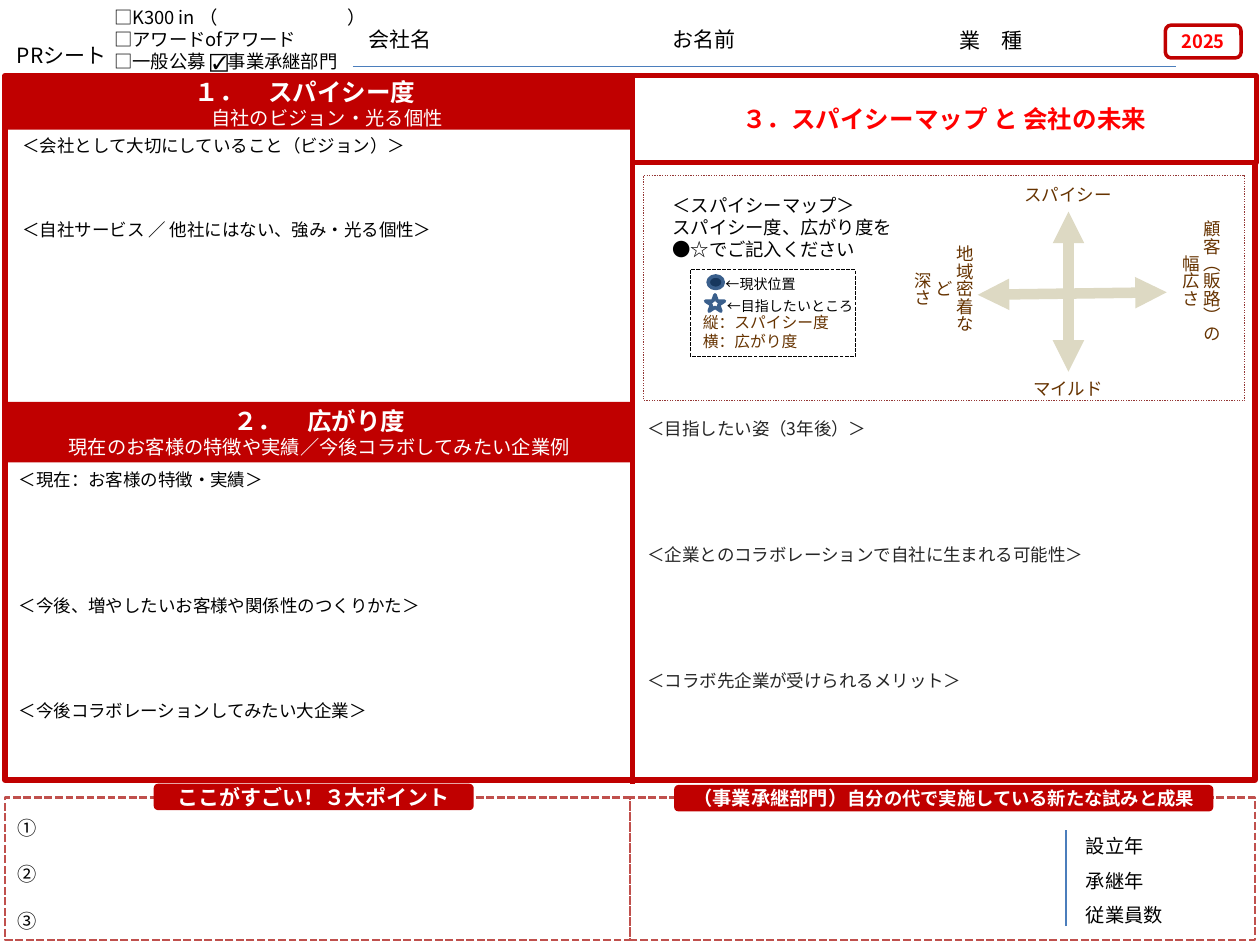
from dataclasses import dataclass

from lxml import etree
from pptx import Presentation
from pptx import util as u
from pptx.dml.color import RGBColor
from pptx.enum import dml, shapes, text
from pptx.oxml.ns import qn

KINDS = shapes.MSO_SHAPE
DASHED = dml.MSO_LINE.SQUARE_DOT
DOTTED = dml.MSO_LINE.ROUND_DOT
MIDDLE = text.MSO_ANCHOR.MIDDLE


@dataclass(frozen=True)
class Theme:
    font: str = "Noto Sans CJK JP"
    ink: str = "000000"
    soft_ink: str = "262626"
    white: str = "FFFFFF"
    red: str = "C00000"
    bright_red: str = "FF0000"
    dash_red: str = "C0504D"
    dot_red: str = "953735"
    brown: str = "663300"
    beige: str = "DDD9C3"
    rule_blue: str = "4B7EBC"
    mark_blue: str = "3A5F8C"
    navy: str = "17375E"
    heading: float = 14
    field: float = 12
    sub: float = 11
    note: float = 10.5
    body: float = 10
    legend: float = 9
    key: float = 8
    leading: float = 1.2


@dataclass
class Line:
    """One paragraph; gap counts the empty lines above it, tail is a second span."""
    words: str
    size: float
    bold: bool = False
    gap: float = 0
    tail: "Line | None" = None


class Sheet:
    def __init__(self, page, theme):
        self.page = page
        self.theme = theme

    def shape(self, kind, at, fill=None, line=None, width=1, dash=None):
        box = self.page.shapes.add_shape(kind, *map(u.Inches, at))
        box.shadow.inherit = False
        if fill:
            box.fill.solid()
            box.fill.fore_color.rgb = RGBColor.from_string(fill)
        else:
            box.fill.background()
        if line:
            box.line.color.rgb = RGBColor.from_string(line)
            box.line.width = u.Pt(width)
            if dash:
                box.line.dash_style = dash
        else:
            box.line.fill.background()
        return box

    def text(self, at, lines, color=None, center=False, anchor=text.MSO_ANCHOR.TOP,
             spacing=1, wrap=True):
        box = self.page.shapes.add_textbox(*map(u.Inches, at))
        self.label(box, lines, color or self.theme.ink, center, anchor, spacing)
        box.text_frame.word_wrap = wrap
        return box

    def label(self, box, lines, color, center=True, anchor=MIDDLE, spacing=1):
        frame = box.text_frame
        frame.vertical_anchor = anchor
        frame.text = "\n".join(line.words for line in lines)
        for para, line in zip(frame.paragraphs, lines):
            pitch = line.size * self.theme.leading * spacing
            para.alignment = text.PP_ALIGN.CENTER if center else text.PP_ALIGN.LEFT
            para.line_spacing = u.Pt(pitch)
            if line.gap:
                para.space_before = u.Pt(line.gap * pitch)
            for span in para.runs:
                self.style(span, line, color)
            if line.tail:
                span = para.add_run()
                span.text = line.tail.words
                self.style(span, line.tail, color)

    def style(self, span, line, color):
        span.font.size = u.Pt(line.size)
        span.font.bold = line.bold
        span.font.color.rgb = RGBColor.from_string(color)
        span.font.name = self.theme.font
        etree.SubElement(span.font._element, qn("a:ea"), typeface=self.theme.font)

    def vertical_text(self, at, lines, color):
        box = self.text(at, lines, color, center=True, anchor=MIDDLE)
        box.text_frame._txBody.bodyPr.set("vert", "eaVert")

    def band(self, at, lines, rounded=False):
        kind = KINDS.ROUNDED_RECTANGLE if rounded else KINDS.RECTANGLE
        self.label(self.shape(kind, at, fill=self.theme.red), lines, self.theme.white)

    def rule(self, start, end, color, width, arrows=False):
        rule = self.page.shapes.add_connector(
            shapes.MSO_CONNECTOR.STRAIGHT, *map(u.Inches, start + end))
        rule.line.color.rgb = RGBColor.from_string(color)
        rule.line.width = u.Pt(width)
        if arrows:
            for end_tag in ("a:headEnd", "a:tailEnd"):
                etree.SubElement(rule.line._ln, qn(end_tag), type="triangle")
        etree.SubElement(rule._element.spPr, qn("a:effectLst"))


def draw_frame(sheet, theme):
    sheet.shape(KINDS.RECTANGLE, (0.04, 6.33, 4.96, 1.13), line=theme.dash_red,
                width=1.5, dash=DASHED)
    sheet.band((0.02, 0.61, 5, 0.42), [
        Line("１．　スパイシー度　", theme.heading, True),
        Line("　自社のビジョン・光る個性", theme.sub)])
    sheet.shape(KINDS.RECTANGLE, (0.04, 0.6, 9.92, 5.59), line=theme.red, width=3)
    sheet.band((0.04, 3.19, 4.99, 0.48), [
        Line("２．　広がり度", theme.heading, True),
        Line("現在のお客様の特徴や実績／今後コラボしてみたい企業例", theme.sub)])
    title = sheet.shape(KINDS.RECTANGLE, (5.02, 0.6, 4.95, 0.69), theme.white, theme.red, 3)
    sheet.label(title, [Line("３．スパイシーマップ と 会社の未来", theme.heading, True)],
                theme.bright_red)
    sheet.rule((5.02, 0.63), (5.02, 6.22), theme.red, 3)


def draw_header(sheet, theme):
    for left, top, label in ((2.83, 0.16, "会社名"), (5.24, 0.16, "お名前"),
                             (7.52, 0.17, "業　種")):
        sheet.text((left, top, 1.28, 0.3), [Line(label, theme.field)])
    sheet.rule((2.8, 0.53), (9.33, 0.53), theme.rule_blue, 0.75)
    year = sheet.shape(KINDS.ROUNDED_RECTANGLE, (9.25, 0.2, 0.6, 0.26),
                       theme.white, theme.red, 2)
    sheet.label(year, [Line("2025", theme.note, True)], theme.bright_red)
    entries = sheet.text((0.81, 0, 2.28, 0.63), [
        Line(words, theme.note) for words in
        ("□K300 in （\t）", "□アワードofアワード", "□一般公募 ☑事業承継部門")])
    properties = entries.text_frame.paragraphs[0]._p.get_or_add_pPr()
    tabs = etree.SubElement(properties, qn("a:tabLst"))
    etree.SubElement(tabs, qn("a:tab"), pos=str(u.Inches(1.85)), algn="l")
    sheet.text((0, 0.29, 0.98, 0.3), [Line("PRシート", theme.field)], center=True)


def draw_map(sheet, theme):
    legend = sheet.shape(KINDS.RECTANGLE, (5.48, 2.14, 1.31, 0.69), line=theme.ink,
                         width=0.75, dash=DASHED)
    sheet.label(legend, [Line("縦：スパイシー度", theme.legend),
                         Line("横：広がり度", theme.legend)],
                theme.brown, center=False, anchor=text.MSO_ANCHOR.BOTTOM)
    sheet.text((5.66, 2.14, 0.76, 0.24), [Line("←現状位置", theme.key)], wrap=False)
    sheet.text((5.67, 2.31, 1.21, 0.24), [Line("←目指したいところ", theme.key)], wrap=False)
    sheet.text((5.24, 1.49, 2.05, 0.63), [
        Line(words, theme.note) for words in
        ("＜スパイシーマップ＞", "スパイシー度、広がり度を", "●☆でご記入ください")])
    for top, label in ((1.41, "スパイシー"), (2.95, "マイルド")):
        sheet.text((8, top, 0.95, 0.27), [Line(label, theme.body)], theme.brown, center=True)
    for at, words in (((9.26, 1.65, 0.54, 1.34), ("顧客（販路）の", "幅広さ")),
                      ((7.22, 1.85, 0.54, 0.98), ("地域密着など", "深さ"))):
        sheet.vertical_text(at, [Line(word, theme.body) for word in words], theme.brown)
    sheet.shape(KINDS.RECTANGLE, (5.11, 1.39, 4.77, 1.79), line=theme.dot_red,
                width=0.75, dash=DOTTED)
    sheet.rule((8.48, 1.68), (8.48, 2.95), theme.beige, 6, arrows=True)
    sheet.rule((9.26, 2.32), (7.76, 2.34), theme.beige, 6, arrows=True)
    sheet.shape(KINDS.STAR_5_POINT, (5.6, 2.34, 0.15, 0.13), theme.white, theme.mark_blue, 2)
    sheet.shape(KINDS.OVAL, (5.62, 2.19, 0.12, 0.1), theme.navy, theme.mark_blue, 2)


def draw_points(sheet, theme):
    sheet.band((1.22, 6.22, 2.54, 0.21),
               [Line("ここがすごい！３大ポイント", theme.field, True)], rounded=True)
    sheet.shape(KINDS.RECTANGLE, (5, 6.33, 4.96, 1.13), line=theme.dash_red,
                width=1.5, dash=DASHED)
    sheet.band((5.35, 6.23, 4.28, 0.21), [
        Line("（事業承継部門）", theme.sub, True,
             tail=Line("自分の代で実施している新たな試みと成果", theme.note, True))],
        rounded=True)
    sheet.rule((8.46, 7.35), (8.46, 6.59), theme.rule_blue, 0.75)
    sheet.text((8.52, 6.48, 1.48, 0.91), [
        Line(words, theme.sub) for words in ("設立年", "承継年", "従業員数")], spacing=1.5)
    sheet.text((0.04, 6.43, 4.88, 1.05), [
        Line("①", theme.sub), Line("②", theme.sub, gap=1), Line("③", theme.sub, gap=1)])


def draw_answers(sheet, theme):
    sheet.text((5.04, 3.27, 4.92, 2.96), [
        Line("＜目指したい姿（3年後）＞", theme.body),
        Line("＜企業とのコラボレーションで自社に生まれる可能性＞", theme.body, gap=5),
        Line("＜コラボ先企業が受けられるメリット＞", theme.body, gap=5)], theme.soft_ink)
    sheet.text((0.08, 1.02, 4.92, 2.14), [
        Line("＜会社として大切にしていること（ビジョン）＞", theme.body),
        Line("＜自社サービス ／ 他社にはない、強み・光る個性＞", theme.body, gap=3)])
    sheet.text((0.05, 3.67, 4.95, 2.55), [
        Line("＜現在：お客様の特徴・実績＞", theme.body),
        Line("＜今後、増やしたいお客様や関係性のつくりかた＞", theme.body, gap=5),
        Line("＜今後コラボレーションしてみたい大企業＞", theme.body, gap=4)])


def main():
    deck = Presentation()
    deck.slide_width, deck.slide_height = u.Inches(10), u.Inches(7.5)
    theme = Theme()
    sheet = Sheet(deck.slides.add_slide(deck.slide_layouts[6]), theme)
    for draw in (draw_frame, draw_header, draw_map, draw_points, draw_answers):
        draw(sheet, theme)
    deck.save("out.pptx")


if __name__ == "__main__":
    main()
